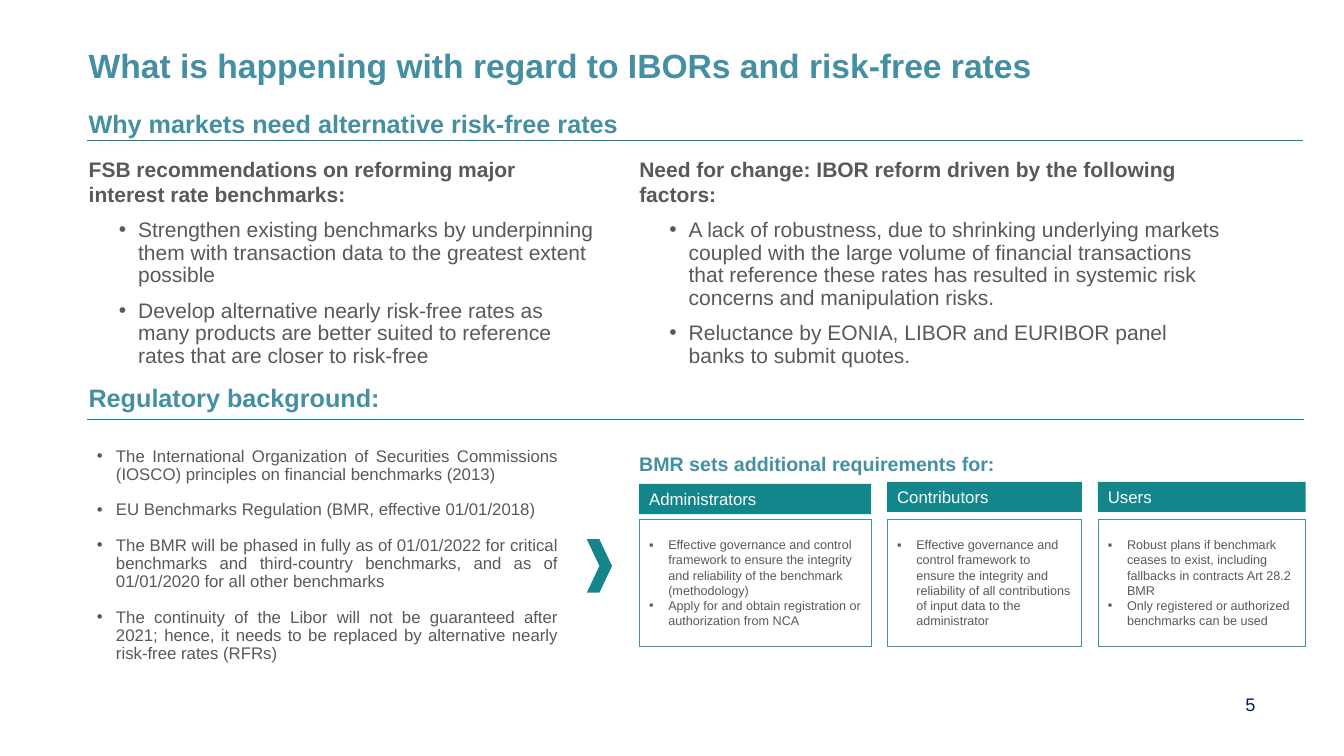
from lxml.etree import SubElement
from pptx import Presentation
from pptx.dml.color import RGBColor
from pptx.enum.shapes import MSO_CONNECTOR, MSO_SHAPE
from pptx.enum.text import MSO_ANCHOR, MSO_AUTO_SIZE, PP_ALIGN
from pptx.oxml.ns import qn
from pptx.util import Pt

SCALE = 9144
BLUE, TEAL, GREY, NAVY, WHITE = "458FA3", "13868C", "595959", "002060", "FFFFFF"


def style(size, color, bold=False, bullet=None, left=0, level=0, line=1.0,
          before=0, after=0, align=PP_ALIGN.LEFT):
    """Gather the format values of one kind of paragraph."""
    return {
        "color": color, "bullet": bullet, "left": left,
        "para": {"level": level, "line_spacing": line, "space_before": Pt(before),
                 "space_after": Pt(after), "alignment": align},
        "font": {"name": "Arial", "size": Pt(size), "bold": bold},
    }


TITLE = style(24, BLUE, True, line=0.9)
HEAD = style(18, BLUE, True)
LEAD = style(15, GREY, True, after=3)
POINT = style(15, GREY, bullet="•", left=49, level=1, line=0.9, before=6, after=3)
RULE = style(12, GREY, bullet="•", left=19, line=0.9, before=12.5,
             align=PP_ALIGN.JUSTIFY)
LABEL = style(14, BLUE, True)
NAME = style(12, WHITE)
DUTY = style(9, GREY, bullet="▪", left=19)
PAGE = style(13, NAVY, align=PP_ALIGN.RIGHT)


def paint(color, value):
    """Set a colour format from a hex string."""
    color.rgb = RGBColor.from_string(value)


def place(box):
    """Turn a box in px into EMU."""
    return [n * SCALE for n in box]


def write(shape, rows, anchor=MSO_ANCHOR.TOP):
    """Fill a shape with rows of text and style."""
    frame = shape.text_frame
    for key, value in {"word_wrap": True, "auto_size": MSO_AUTO_SIZE.NONE,
                       "vertical_anchor": anchor}.items():
        setattr(frame, key, value)
    for i, (text, look) in enumerate(rows):
        para = frame.add_paragraph() if i else frame.paragraphs[0]
        para.text = text
        props = para._p.get_or_add_pPr()
        props.set("marL", str(look["left"] * SCALE))
        props.set("indent", str(-19 * SCALE if look["bullet"] else 0))
        if look["bullet"]:
            SubElement(props, qn("a:buFont"), typeface="Arial")
            SubElement(props, qn("a:buChar"), char=look["bullet"])
        else:
            SubElement(props, qn("a:buNone"))
        for key, value in look["para"].items():
            setattr(para, key, value)
        if i == 0:
            para.space_before = Pt(0)
        for key, value in look["font"].items():
            setattr(para.font, key, value)
        paint(para.font.color, look["color"])


def fill(holder, box, rows):
    """Move a placeholder to a box and write its rows."""
    for key, value in zip(("left", "top", "width", "height"), place(box)):
        setattr(holder, key, value)
    write(holder, rows)


def note(slide, box, text, look, anchor=MSO_ANCHOR.TOP):
    """Add a text box of one paragraph."""
    write(slide.shapes.add_textbox(*place(box)), [(text, look)], anchor)


def block(slide, box, kind=MSO_SHAPE.RECTANGLE, back=None, edge=None):
    """Add a flat shape with a fill or an outline."""
    shape = slide.shapes.add_shape(kind, *place(box))
    shape.shadow.inherit = False
    if back:
        shape.fill.solid()
        paint(shape.fill.fore_color, back)
    else:
        shape.fill.background()
    if edge:
        paint(shape.line.color, edge)
        shape.line.width = Pt(0.5)
    else:
        shape.line.fill.background()
    return shape


def section(slide, box, text):
    """Add a section heading with a rule along the foot of its box."""
    x, y, w, h = box
    note(slide, (x, y, w, 40), text, HEAD)
    ends = place((x + 8, y + h, x + w, y + h))
    rule = slide.shapes.add_connector(MSO_CONNECTOR.STRAIGHT, *ends)
    paint(rule.line.color, TEAL)
    rule.line.width = Pt(0.75)
    SubElement(rule._element.spPr, qn("a:effectLst"))


def card(slide, box, lift, name, duties):
    """Add a name bar above an outlined box of duties."""
    x, y, w, h = box
    bar = block(slide, (x, y + lift, w, 30), back=TEAL)
    write(bar, [(name, NAME)])
    body = block(slide, (x, y + 37, w, h - 37), edge=BLUE)
    write(body, [(text, DUTY) for text in duties], MSO_ANCHOR.MIDDLE)


def panel(slide, box):
    """Add the requirements label and a row of three cards."""
    x, y, w, h = box
    note(slide, (x, y, 381, 34), "BMR sets additional requirements for:", LABEL)
    cards = (
        (230, 2, "Administrators", (
            "Effective governance and control framework to ensure the integrity "
            "and reliability of the benchmark (methodology)",
            "Apply for and obtain registration or authorization from NCA")),
        (193, 0, "Contributors", (
            "Effective governance and control framework to ensure the integrity "
            "and reliability of all contributions of input data to the administrator",)),
        (206, 0, "Users", (
            "Robust plans if benchmark ceases to exist, including fallbacks in "
            "contracts Art 28.2 BMR",
            "Only registered or authorized benchmarks can be used")),
    )
    gap = (w - 10 - sum(c[0] for c in cards)) // (len(cards) - 1)
    left = x + 10
    for wide, lift, name, duties in cards:
        card(slide, (left, y + 35, wide, h - 35), lift, name, duties)
        left += wide + gap


def reasons(holder, box, lead, points):
    """Fill a column with a bold lead and its points."""
    fill(holder, box, [(lead, LEAD)] + [(text, POINT) for text in points])


def main():
    """Build the slide and save it."""
    deck = Presentation()
    deck.slide_width, deck.slide_height = place((1333, 750))
    slide = deck.slides.add_slide(deck.slide_layouts[4])
    title, first, second, third, spare = slide.placeholders
    spare.element.getparent().remove(spare.element)

    fill(title, (78, 44, 1077, 81),
         [("What is happening with regard to IBORs and risk-free rates", TITLE)])
    section(slide, (78, 103, 1214, 36), "Why markets need alternative risk-free rates")
    reasons(first, (78, 150, 522, 257),
            "FSB recommendations on reforming major interest rate benchmarks:", (
                "Strengthen existing benchmarks by underpinning them with "
                "transaction data to the greatest extent possible",
                "Develop alternative nearly risk-free rates as many products are "
                "better suited to reference rates that are closer to risk-free"))
    reasons(second, (624, 150, 597, 222),
            "Need for change: IBOR reform driven by the following factors:", (
                "A lack of robustness, due to shrinking underlying markets coupled "
                "with the large volume of financial transactions that reference "
                "these rates has resulted in systemic risk concerns and "
                "manipulation risks.",
                "Reluctance by EONIA, LIBOR and EURIBOR panel banks to submit quotes."))
    section(slide, (78, 374, 1215, 42), "Regulatory background:")
    rules = (
        "The International Organization of Securities Commissions (IOSCO) "
        "principles on financial benchmarks (2013)",
        "EU Benchmarks Regulation (BMR, effective 01/01/2018)",
        "The BMR will be phased in fully as of 01/01/2022 for critical benchmarks "
        "and third-country benchmarks, and as of 01/01/2020 for all other benchmarks",
        "The continuity of the Libor will not be guaranteed after 2021; hence, it "
        "needs to be replaced by alternative nearly risk-free rates (RFRs)",
    )
    fill(third, (86, 439, 478, 265), [(text, RULE) for text in rules])
    block(slide, (582, 535, 25, 53), MSO_SHAPE.CHEVRON, back=TEAL)
    panel(slide, (624, 443, 671, 198))
    note(slide, (955, 679, 300, 40), "5", PAGE, MSO_ANCHOR.MIDDLE)
    deck.save("out.pptx")


if __name__ == "__main__":
    main()
